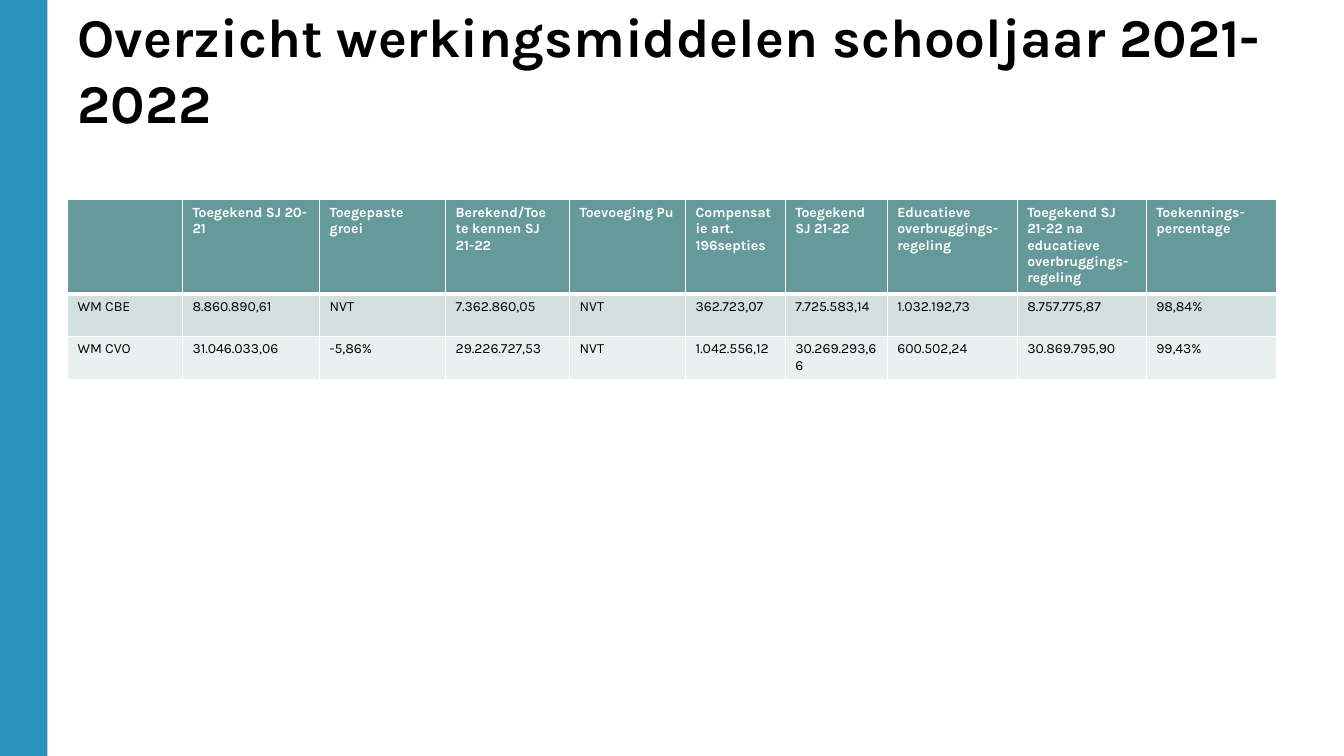
import pptx
import pptx.dml.color
import pptx.enum.shapes
import pptx.enum.text
import pptx.util
from lxml import etree
from pptx.oxml.ns import qn
from pptx.util import Inches


class Theme:
    font = "Karla"
    title_size = pptx.util.Pt(39)
    table_size = pptx.util.Pt(10)
    black = pptx.dml.color.RGBColor.from_string("000000")
    white = pptx.dml.color.RGBColor.from_string("FFFFFF")
    sidebar = pptx.dml.color.RGBColor.from_string("2B92BE")
    row_fills = [pptx.dml.color.RGBColor.from_string(code)
                 for code in ("669999", "D3DEDE", "EAEFEF")]


def style_font(para, size, color, bold):
    para.font.name = Theme.font
    para.font.size = size
    para.font.color.rgb = color
    para.font.bold = bold


def add_cell_border(cell, side, points):
    """Draw a white line on one side (L, R, T or B); call before filling the cell."""
    properties = cell._tc.get_or_add_tcPr()
    line = etree.SubElement(properties, qn(f"a:ln{side}"), w=str(pptx.util.Pt(points)))
    fill = etree.SubElement(line, qn("a:solidFill"))
    etree.SubElement(fill, qn("a:srgbClr"), val=str(Theme.white))


deck = pptx.Presentation()
deck.slide_width = Inches(13.33)
deck.slide_height = Inches(7.5)
page = deck.slides.add_slide(deck.slide_layouts[6])

# Sidebar
sidebar = page.shapes.add_shape(
    pptx.enum.shapes.MSO_SHAPE.RECTANGLE, 0, 0, Inches(0.47), deck.slide_height)
sidebar.shadow.inherit = False
sidebar.fill.solid()
sidebar.fill.fore_color.rgb = Theme.sidebar
sidebar.line.fill.background()

# Title
title = page.shapes.add_textbox(Inches(0.67), Inches(0.13), Inches(12.41), Inches(1.25))
title.text_frame.word_wrap = True
title.text_frame.vertical_anchor = pptx.enum.text.MSO_ANCHOR.BOTTOM
title.text_frame.text = "Overzicht werkingsmiddelen schooljaar 2021-2022"
style_font(title.text_frame.paragraphs[0], Theme.title_size, Theme.black, True)

# Table
rows = [
    ["", "Toegekend SJ 20-21", "Toegepaste groei", "Berekend/Toe te kennen SJ 21-22",
     "Toevoeging Pu", "Compensatie art. 196septies", "Toegekend SJ 21-22",
     "Educatieve overbruggings-regeling",
     "Toegekend SJ 21-22 na educatieve overbruggings-regeling", "Toekennings-percentage"],
    ["WM CBE", "8.860.890,61", "NVT", "7.362.860,05", "NVT", "362.723,07",
     "7.725.583,14", "1.032.192,73", "8.757.775,87", "98,84%"],
    ["WM CVO", "31.046.033,06", "-5,86%", "29.226.727,53", "NVT", "1.042.556,12",
     "30.269.293,66", "600.502,24", "30.869.795,90", "99,43%"],
]
column_widths = [1.14, 1.36, 1.25, 1.23, 1.15, 0.99, 1.01, 1.29, 1.28, 1.29]
row_heights = [0.93, 0.42, 0.42]

table = page.shapes.add_table(
    len(rows), len(column_widths), Inches(0.67), Inches(1.98),
    Inches(sum(column_widths)), Inches(sum(row_heights))).table
for column, width in zip(table.columns, column_widths):
    column.width = Inches(width)

for row_index, texts in enumerate(rows):
    table.rows[row_index].height = Inches(row_heights[row_index])
    is_header = row_index == 0
    border_widths = {"L": 1, "R": 1, "T": 3 if row_index == 1 else 1, "B": 3 if is_header else 1}
    for column_index, text in enumerate(texts):
        cell = table.cell(row_index, column_index)
        for side, points in border_widths.items():
            add_cell_border(cell, side, points)
        cell.fill.solid()
        cell.fill.fore_color.rgb = Theme.row_fills[row_index]
        cell.text = text
        style_font(cell.text_frame.paragraphs[0], Theme.table_size,
                   Theme.white if is_header else Theme.black, is_header)

deck.save("out.pptx")
